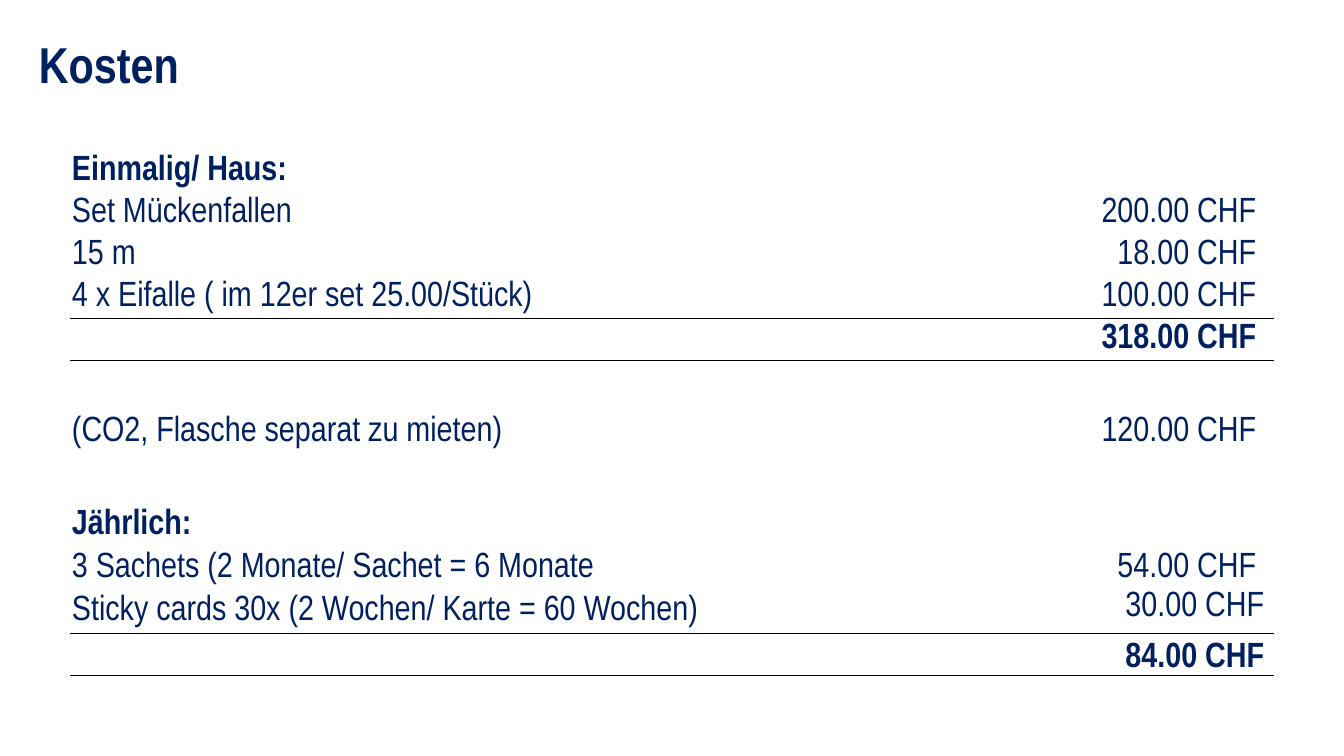
from lxml.etree import SubElement
from pptx import Presentation
from pptx.dml.color import RGBColor
from pptx.enum.text import MSO_ANCHOR, PP_ALIGN
from pptx.oxml.ns import qn
from pptx.util import Pt

PX = 12192000 / 1344
COLORS = {"navy": "002060", "rule": "000000"}
FONT = "Arial Narrow"


def px(count):
    return round(count * PX)


def style(paragraph, size, bold):
    paragraph.font.name = FONT
    paragraph.font.size = Pt(size)
    paragraph.font.bold = bold
    paragraph.font.color.rgb = RGBColor.from_string(COLORS["navy"])


deck = Presentation()
deck.slide_width, deck.slide_height = px(1344), px(756)
page = deck.slides.add_slide(deck.slide_layouts[6])

# Cost table: label, amount, row height, bold
costs = [
    ("Einmalig/ Haus:", "", 42, True),
    ("Set Mückenfallen", "200.00 CHF", 42, False),
    ("15 m", "18.00 CHF", 42, False),
    ("4 x Eifalle ( im 12er set 25.00/Stück)", "100.00 CHF", 42, False),
    ("", "318.00 CHF", 42, True),
    ("", "", 51, False),
    ("(CO2, Flasche separat zu mieten)", "120.00 CHF", 42, False),
    ("", "", 51, False),
    ("Jährlich:", "", 43, True),
    ("3 Sachets (2 Monate/ Sachet = 6 Monate", "54.00 CHF", 43, False),
    ("Sticky cards 30x (2 Wochen/ Karte = 60 Wochen)", "30.00 CHF", 43, False),
    ("", "84.00 CHF", 42, True),
]
total_rows = [4, 11]
amount_anchors = {10: MSO_ANCHOR.TOP, 11: MSO_ANCHOR.BOTTOM}
ruled_tops = total_rows + [row + 1 for row in total_rows]
ruled_bottoms = total_rows + [row - 1 for row in total_rows]

table_height = sum(height for _, _, height, _ in costs)
table = page.shapes.add_table(len(costs), 2, px(71), px(150), px(1202), px(table_height)).table
table.first_row = False
table.horz_banding = False
table.columns[0].width, table.columns[1].width = px(824), px(378)

for row, (label, amount, height, bold) in enumerate(costs):
    table.rows[row].height = px(height)
    for column, text in enumerate((label, amount)):
        cell = table.cell(row, column)
        cell.margin_left = cell.margin_top = cell.margin_right = px(1)
        cell.margin_bottom = 0
        cell.vertical_anchor = MSO_ANCHOR.MIDDLE
        para = cell.text_frame.paragraphs[0]
        if text:
            para.text = text
            style(para, 25, bold)
        if column == 1:
            para.alignment = PP_ALIGN.RIGHT
            cell.margin_right = px(9 if row in amount_anchors else 17)
            cell.vertical_anchor = amount_anchors.get(row, MSO_ANCHOR.MIDDLE)
        properties = cell._tc.get_or_add_tcPr()
        for edge, ruled_rows in (("a:lnT", ruled_tops), ("a:lnB", ruled_bottoms)):
            if row in ruled_rows:
                line = SubElement(properties, qn(edge), w=str(Pt(0.5)))
                fill = SubElement(line, qn("a:solidFill"))
                SubElement(fill, qn("a:srgbClr"), val=COLORS["rule"])
        cell.fill.background()

# Title
box = page.shapes.add_textbox(px(29), px(28), px(672), px(71))
box.text_frame.word_wrap = True
title = box.text_frame.paragraphs[0]
title.text = "Kosten"
style(title, 36, True)

deck.save("out.pptx")
